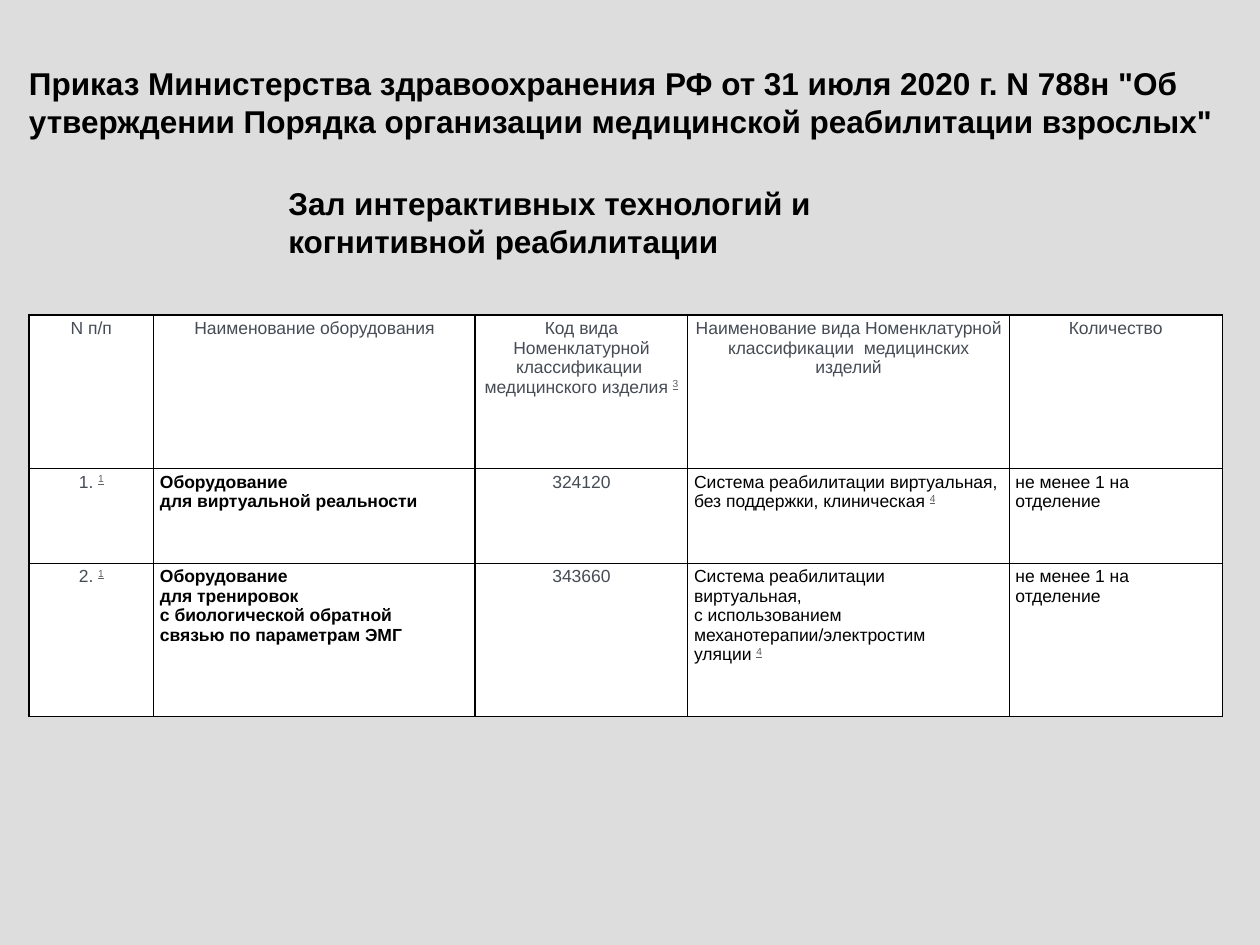
from dataclasses import dataclass

from lxml.etree import SubElement
from pptx import Presentation
from pptx.dml.color import RGBColor
from pptx.enum.text import MSO_ANCHOR as Anchor, PP_ALIGN as Align
from pptx.oxml.ns import qn
from pptx.util import Inches, Pt

BACKGROUND = RGBColor(0xDD, 0xDD, 0xDD)
WHITE = RGBColor(0xFF, 0xFF, 0xFF)
BLACK = RGBColor(0x00, 0x00, 0x00)
SLATE = RGBColor(0x46, 0x4C, 0x55)
GREY = RGBColor(0x5F, 0x5F, 0x5F)
FONT = "Arial"
COLUMN_WIDTHS = (0.99, 2.55, 1.69, 2.55, 1.69)
ROW_HEIGHTS = (1.22, 0.75, 1.22)


@dataclass(frozen=True)
class CellText:
    text: str
    note: str = ""
    color: RGBColor = BLACK
    bold: bool = False
    align: Align = Align.LEFT


def centered(text: str, note: str = "") -> CellText:
    return CellText(text, note, SLATE, align=Align.CENTER)


QUANTITY = CellText("не менее 1 на\nотделение")
ROWS = (
    (
        centered("N п/п"),
        centered("Наименование оборудования"),
        centered("Код вида Номенклатурной классификации  медицинского изделия ", "3"),
        centered("Наименование вида Номенклатурной классификации  медицинских изделий"),
        centered("Количество"),
    ),
    (
        centered("1. ", "1"),
        CellText("Оборудование\nдля виртуальной реальности", bold=True),
        centered("324120"),
        CellText("Система реабилитации виртуальная, без поддержки, клиническая ", "4"),
        QUANTITY,
    ),
    (
        centered("2. ", "1"),
        CellText("Оборудование\nдля тренировок\nс биологической обратной\n"
                 "связью по параметрам ЭМГ", bold=True),
        centered("343660"),
        CellText("Система реабилитации\nвиртуальная,\nс использованием\n"
                 "механотерапии/электростим\nуляции ", "4"),
        QUANTITY,
    ),
)


def add_run(paragraph, text: str, size: float, color: RGBColor, bold: bool = False):
    run = paragraph.add_run()
    run.text = text
    run.font.name = FONT
    run.font.size = Pt(size)
    run.font.bold = bold
    run.font.color.rgb = color
    return run


def write_text(frame, text: str, *, size: float, color: RGBColor = BLACK,
               bold: bool = False, align: Align = Align.LEFT, note: str = "") -> None:
    frame.word_wrap = True
    for index, line in enumerate(text.split("\n")):
        paragraph = frame.add_paragraph() if index else frame.paragraphs[0]
        paragraph.alignment = align
        add_run(paragraph, line, size, color, bold)
    if note:
        run = add_run(paragraph, note, size, GREY)
        run.font.underline = True
        run.font._element.set("baseline", "30000")


def add_heading(slide, text: str, left: float, top: float, width: float, height: float):
    shape = slide.shapes.add_textbox(Inches(left), Inches(top), Inches(width), Inches(height))
    write_text(shape.text_frame, text, size=18, bold=True)
    return shape.text_frame


def set_borders(cell) -> None:
    properties = cell._tc.get_or_add_tcPr()
    for position, side in enumerate(("lnL", "lnR", "lnT", "lnB")):
        line = SubElement(properties, qn(f"a:{side}"), w=str(Pt(0.75)))
        fill = SubElement(line, qn("a:solidFill"))
        SubElement(fill, qn("a:srgbClr"), val=str(BLACK))
        properties.insert(position, line)


def fill_cell(cell, content: CellText) -> None:
    cell.margin_left = cell.margin_right = Inches(0.05)
    cell.margin_top = cell.margin_bottom = Inches(0.03)
    cell.fill.solid()
    cell.fill.fore_color.rgb = WHITE
    set_borders(cell)
    write_text(cell.text_frame, content.text, size=10, color=content.color,
               bold=content.bold, align=content.align, note=content.note)


def add_equipment_table(slide) -> None:
    table = slide.shapes.add_table(
        len(ROWS), len(COLUMN_WIDTHS), Inches(0.23), Inches(2.5),
        Inches(sum(COLUMN_WIDTHS)), Inches(sum(ROW_HEIGHTS))).table
    table.first_row = table.horz_banding = False
    for column, width in zip(table.columns, COLUMN_WIDTHS):
        column.width = Inches(width)
    for row, height, contents in zip(table.rows, ROW_HEIGHTS, ROWS):
        row.height = Inches(height)
        for cell, content in zip(row.cells, contents):
            fill_cell(cell, content)


def main() -> None:
    presentation = Presentation()
    presentation.slide_width = Inches(10)
    presentation.slide_height = Inches(7.5)
    slide = presentation.slides.add_slide(presentation.slide_layouts[6])
    slide.background.fill.solid()
    slide.background.fill.fore_color.rgb = BACKGROUND

    title = add_heading(
        slide, 'Приказ Министерства здравоохранения РФ от 31 июля 2020 г. N 788н "Об '
        'утверждении Порядка организации медицинской реабилитации взрослых"',
        0.23, 0.39, 9.49, 1.02)
    title.margin_left = title.margin_right = 0
    title.margin_bottom = Inches(0.3)
    title.vertical_anchor = Anchor.BOTTOM

    add_equipment_table(slide)
    add_heading(slide, "Зал интерактивных технологий и когнитивной реабилитации",
                2.19, 1.41, 5, 0.71)
    presentation.save("out.pptx")


if __name__ == "__main__":
    main()
